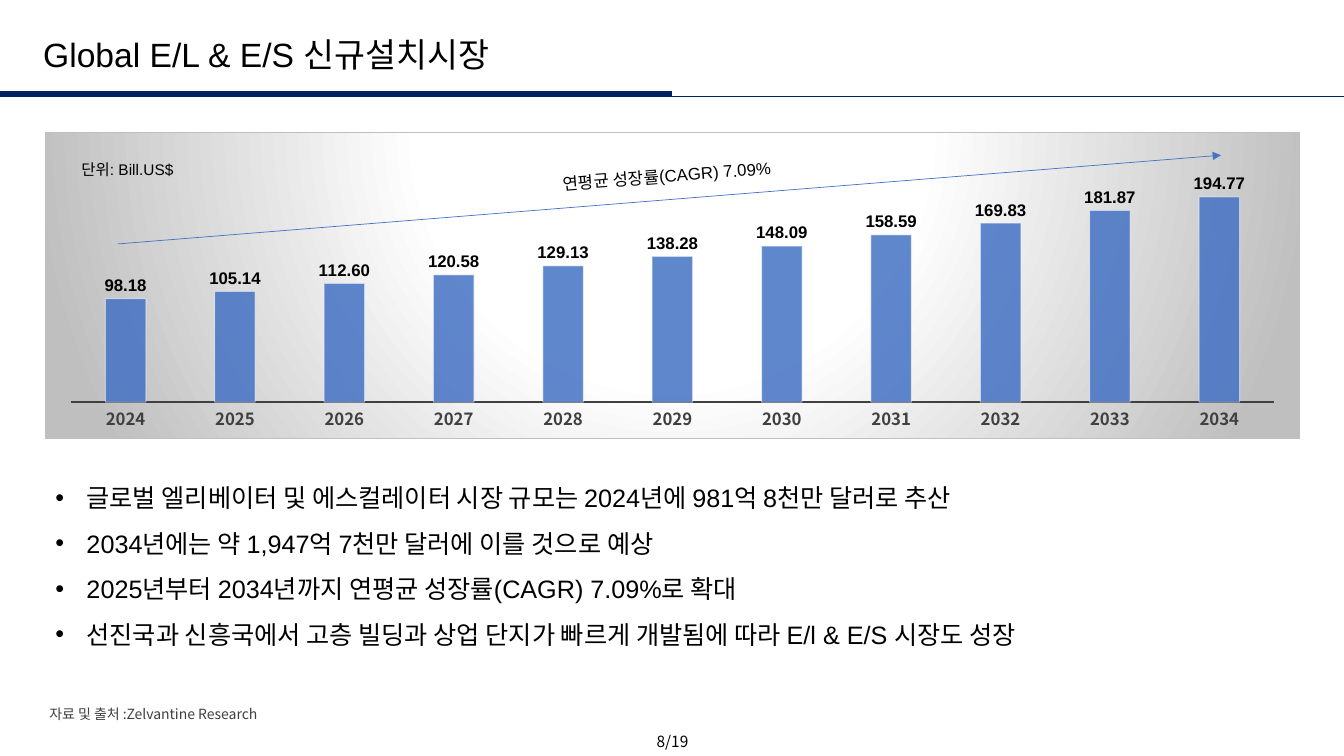
from dataclasses import dataclass

from lxml import etree
from pptx import Presentation
from pptx import util as u
from pptx.chart.data import CategoryChartData
from pptx.dml.color import RGBColor
from pptx.enum import chart as ch, shapes, text
from pptx.oxml import parse_xml
from pptx.oxml.ns import nsdecls, qn

COLORS = {"navy": "002060", "blue": "4472C4", "black": "000000", "dark": "404040",
          "gray": "BFBFBF", "white": "FFFFFF"}
ARIAL, NOTO = "Arial", "Noto Sans CJK KR"
MARKET_SIZE = [98.18, 105.14, 112.6, 120.58, 129.13, 138.28,
               148.09, 158.59, 169.83, 181.87, 194.77]
FIRST_YEAR = 2024


@dataclass
class Label:
    box: tuple[float, float, float, float]
    lines: list[str]
    size: float
    font: str = ARIAL
    color: str = "black"
    rotation: float = 0
    wrap: bool = True
    centered: bool = False
    bulleted: bool = False


@dataclass
class Rule:
    start: tuple[float, float]
    end: tuple[float, float]
    color: str
    width: float
    arrow: bool = False


RULES = [
    Rule((0, 0.93), (6.67, 0.93), "navy", 4.5),
    Rule((6.67, 0.95), (13.33, 0.95), "navy", 0.25),
]
GROWTH_ARROW = Rule((1.17, 2.42), (12.11, 1.54), "blue", 0.5, arrow=True)
LABELS = [
    Label((0.45, 4.59, 12.44, 1.86), [
        "글로벌 엘리베이터 및 에스컬레이터 시장 규모는 2024년에 981억 8천만 달러로 추산",
        "2034년에는 약 1,947억 7천만 달러에 이를 것으로 예상",
        "2025년부터 2034년까지 연평균 성장률(CAGR) 7.09%로 확대",
        "선진국과 신흥국에서 고층 빌딩과 상업 단지가 빠르게 개발됨에 따라 E/l & E/S 시장도 성장",
    ], 18, bulleted=True),
    Label((0.39, 6.95, 6.68, 0.27), ["자료 및 출처 :Zelvantine Research"], 10, NOTO, "dark"),
    Label((5.48, 1.59, 2.32, 0.3), ["연평균 성장률(CAGR) 7.09%"], 12,
          rotation=-4.5, wrap=False),
    Label((0.71, 1.54, 2.01, 0.29), ["단위: Bill.US$"], 11),
    Label((0.33, 0.29, 9.25, 0.5), ["Global E/L & E/S 신규설치시장"], 24),
    Label((6.35, 7.21, 0.64, 0.29), ["8/19"], 11, NOTO, centered=True),
]


def rgb(name: str) -> RGBColor:
    return RGBColor.from_string(COLORS[name])


def set_font(font, size: float, name: str, color: str, bold: bool = False) -> None:
    formats = {"size": u.Pt(size), "name": name, "bold": bold}
    for key, value in formats.items():
        setattr(font, key, value)
    font.color.rgb = rgb(color)


def set_line(line, color: str, width: float) -> None:
    line.color.rgb = rgb(color)
    line.width = u.Pt(width)


def set_alpha(fill_xml, percent: int) -> None:
    """Make the solid colour under fill_xml partly transparent."""
    color = fill_xml.find(f"{qn('a:solidFill')}/{qn('a:srgbClr')}")
    etree.SubElement(color, qn("a:alpha"), val=str(percent * 1000))


def add_rule(slide, rule: Rule) -> None:
    points = [u.Inches(v) for v in rule.start + rule.end]
    sp = slide.shapes.add_connector(shapes.MSO_CONNECTOR.STRAIGHT, *points)
    set_line(sp.line, rule.color, rule.width)
    if rule.arrow:
        etree.SubElement(sp.line._get_or_add_ln(), qn("a:tailEnd"), type="triangle")
    etree.SubElement(sp._element.spPr, qn("a:effectLst"))


def add_bullet(p) -> None:
    pPr = p._p.get_or_add_pPr()
    indent = u.Inches(0.31)
    pPr.set("marL", str(indent))
    pPr.set("indent", str(-indent))
    p.line_spacing = 1.5
    etree.SubElement(pPr, qn("a:buFont"), typeface=ARIAL)
    etree.SubElement(pPr, qn("a:buChar"), char="•")


def add_label(slide, label: Label) -> None:
    sp = slide.shapes.add_textbox(*(u.Inches(v) for v in label.box))
    sp.rotation = label.rotation
    tf = sp.text_frame
    tf.word_wrap = label.wrap
    tf.auto_size = text.MSO_AUTO_SIZE.SHAPE_TO_FIT_TEXT
    for i, line in enumerate(label.lines):
        p = tf.add_paragraph() if i else tf.paragraphs[0]
        if label.centered:
            p.alignment = text.PP_ALIGN.CENTER
        if label.bulleted:
            add_bullet(p)
        r = p.add_run()
        r.text = line
        set_font(r.font, label.size, label.font, label.color)
        etree.SubElement(r._r.get_or_add_rPr(), qn("a:ea"), typeface=NOTO)


def shade_chart_area(chart) -> None:
    """Give the chart a radial gradient and a thin border."""
    stops = "".join(f'<a:gs pos="{pos * 1000}"><a:srgbClr val="{COLORS[c]}"/></a:gs>'
                    for pos, c in [(0, "white"), (39, "white"), (100, "gray")])
    chart._chartSpace.find(qn("c:chart")).addnext(parse_xml(
        f'<c:spPr {nsdecls("c", "a")}><a:gradFill><a:gsLst>{stops}</a:gsLst>'
        '<a:path path="circle"><a:fillToRect l="50000" t="-80000" r="50000" b="180000"/>'
        f'</a:path></a:gradFill><a:ln w="{u.Pt(0.75)}"><a:solidFill>'
        f'<a:srgbClr val="{COLORS["gray"]}"/></a:solidFill></a:ln></c:spPr>'))


def fix_plot_area(chart, x: float, y: float, w: float, h: float) -> None:
    """Place the inner plot area by fractions of the chart."""
    plot_area = chart._chartSpace.find(f"{qn('c:chart')}/{qn('c:plotArea')}")
    old = plot_area.find(qn("c:layout"))
    if old is not None:
        plot_area.remove(old)
    sizes = "".join(f'<c:{k} val="{v}"/>' for k, v in zip("xywh", (x, y, w, h)))
    plot_area.insert(0, parse_xml(
        f'<c:layout {nsdecls("c")}><c:manualLayout><c:layoutTarget val="inner"/>'
        f'<c:xMode val="edge"/><c:yMode val="edge"/>{sizes}</c:manualLayout></c:layout>'))


def add_market_chart(slide) -> None:
    data = CategoryChartData(number_format="0.00")
    data.categories = [str(FIRST_YEAR + i) for i in range(len(MARKET_SIZE))]
    data.add_series("Series 1", MARKET_SIZE)
    box = (u.Inches(v) for v in (0.45, 1.31, 12.44, 3.05))
    chart = slide.shapes.add_chart(ch.XL_CHART_TYPE.COLUMN_CLUSTERED, *box, data).chart
    chart.has_legend = chart.has_title = False
    set_font(chart.font, 10, NOTO, "black")

    years, values = chart.category_axis, chart.value_axis
    years.major_tick_mark = ch.XL_TICK_MARK.NONE
    set_font(years.tick_labels.font, 12, NOTO, "dark", bold=True)
    set_line(years.format.line, "dark", 1.5)
    formats = {"visible": False, "has_major_gridlines": False,
               "minimum_scale": 0, "maximum_scale": 250}
    for key, value in formats.items():
        setattr(values, key, value)

    plot = chart.plots[0]
    plot.gap_width = 170
    plot.vary_by_categories = False
    bars = plot.series[0]
    bars.format.fill.solid()
    bars.format.fill.fore_color.rgb = rgb("blue")
    set_line(bars.format.line, "white", 0.75)
    spPr = bars._element.find(qn("c:spPr"))
    set_alpha(spPr, 85)
    set_alpha(spPr.find(qn("a:ln")), 50)

    labels = bars.data_labels
    formats = {"show_value": True, "number_format": "0.00",
               "number_format_is_linked": False,
               "position": ch.XL_LABEL_POSITION.OUTSIDE_END}
    for key, value in formats.items():
        setattr(labels, key, value)
    set_font(labels.font, 12, ARIAL, "black", bold=True)
    shade_chart_area(chart)
    fix_plot_area(chart, 0.02, 0.02, 0.96, 0.86)


def main() -> None:
    prs = Presentation()
    prs.slide_width, prs.slide_height = u.Inches(13.33), u.Inches(7.5)
    s = prs.slides.add_slide(prs.slide_layouts[6])
    for rule in RULES:
        add_rule(s, rule)
    add_market_chart(s)
    add_rule(s, GROWTH_ARROW)
    for label in LABELS:
        add_label(s, label)
    prs.save("out.pptx")


if __name__ == "__main__":
    main()
